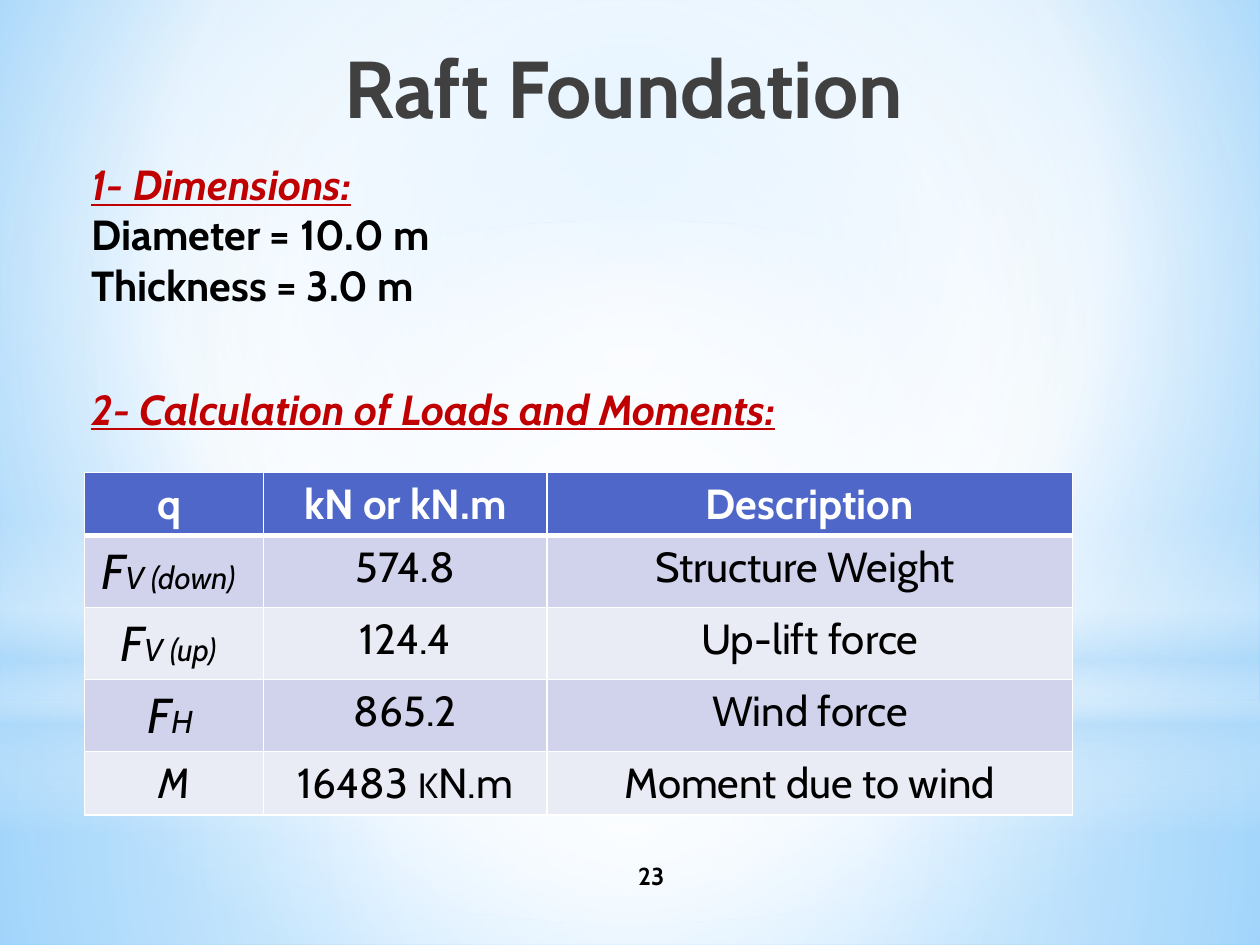
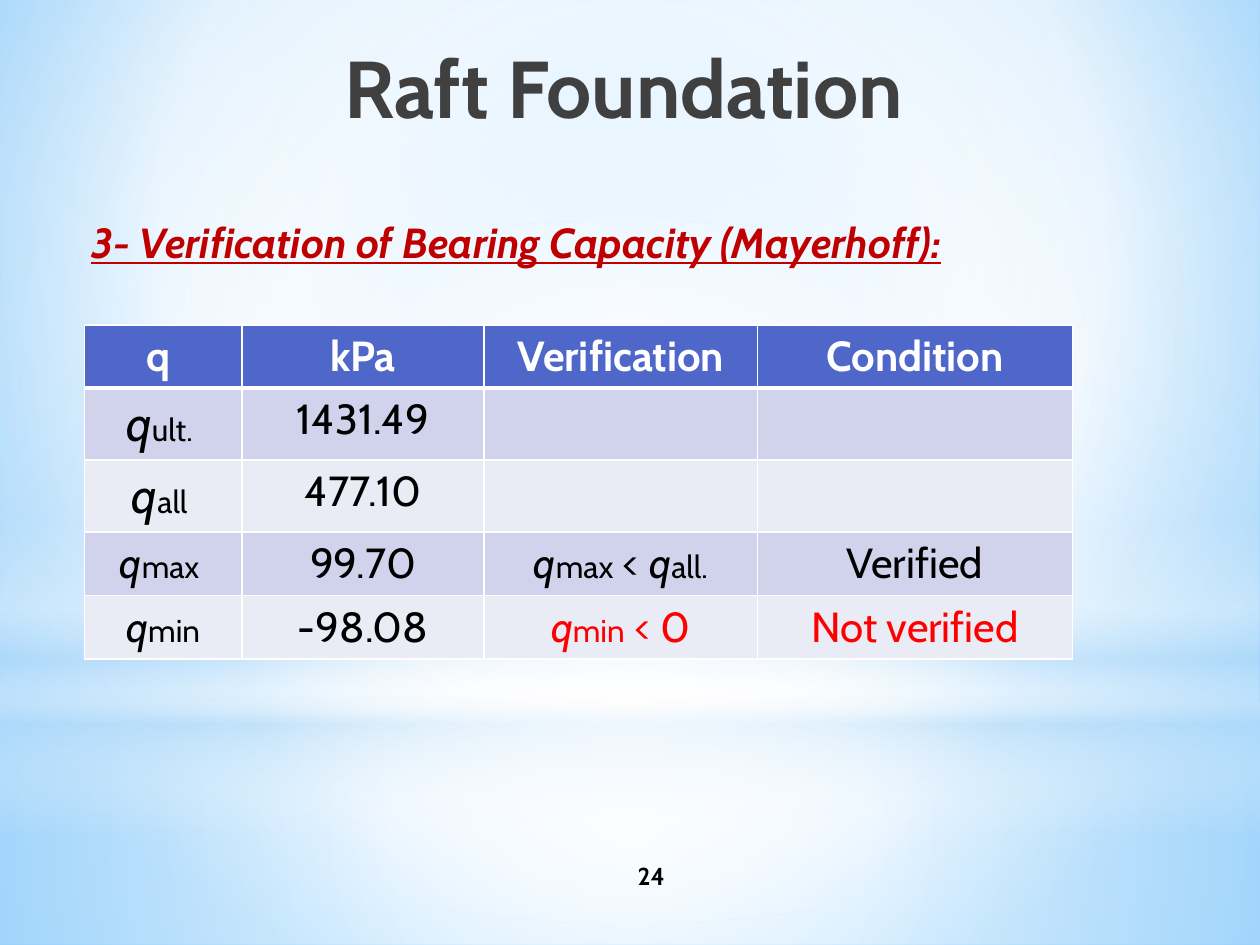
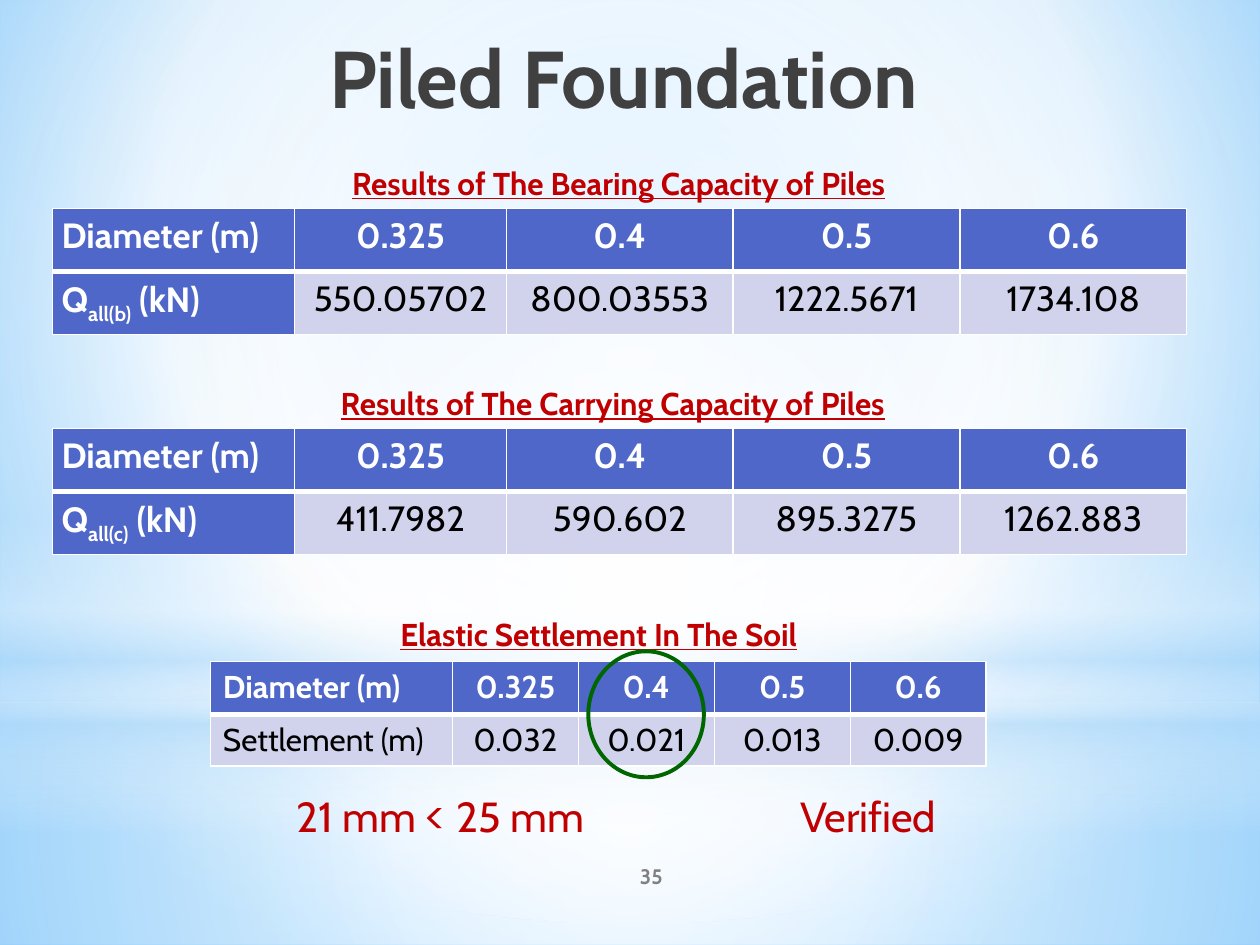
from dataclasses import dataclass
from lxml import etree
from pptx import Presentation
from pptx.dml.color import RGBColor
from pptx.enum.shapes import MSO_SHAPE
from pptx.enum.text import MSO_ANCHOR, MSO_AUTO_SIZE, PP_ALIGN
from pptx.oxml.ns import qn
from pptx.util import Cm, Pt

LEFT, CENTER = PP_ALIGN.LEFT, PP_ALIGN.CENTER
TOP, MIDDLE = MSO_ANCHOR.TOP, MSO_ANCHOR.MIDDLE
RECT, OVAL = MSO_SHAPE.RECTANGLE, MSO_SHAPE.OVAL
TITLE_ONLY = 5


@dataclass(frozen=True)
class Theme:
    font: str = "Cabin"
    white: str = "FFFFFF"
    black: str = "000000"
    title: str = "404040"
    accent: str = "C00000"
    alert: str = "FF0000"
    muted: str = "808080"
    ring: str = "006600"
    header: str = "4E67C8"
    bands: tuple = ("D0D3EB", "E9EBF5")
    sky: str = "B4DCFA"
    edge: str = "9ED5FF"
    deep: str = "5BB9FF"
    title_size: int = 46
    symbol_size: int = 28
    body_size: int = 24
    pile_size: int = 20
    small_size: int = 18
    number_size: int = 14
    grid: int = 1
    header_rule: int = 3


T = Theme()


@dataclass
class Run:
    text: str
    size: int = None
    italic: bool = None
    color: str = None
    baseline: int = None


def rgb(color):
    return RGBColor.from_string(color)


def add(parent, tag, **attrs):
    return etree.SubElement(parent, qn(tag), {k: str(v) for k, v in attrs.items()})


def set_gradient(holder, stops, center=None, angle=90):
    grad = etree.Element(qn("a:gradFill"), {"rotWithShape": "1"})
    gs_list = add(grad, "a:gsLst")
    for pos, color, opacity in stops:
        gs = add(gs_list, "a:gs", pos=pos * 1000)
        clr = add(gs, "a:srgbClr", val=color)
        if opacity < 100:
            add(clr, "a:alpha", val=opacity * 1000)
    if center:
        circle = add(grad, "a:path", **{"path": "circle"})
        add(circle, "a:fillToRect", **{k: v * 1000 for k, v in zip("ltrb", center)})
    else:
        add(grad, "a:lin", ang=angle * 60000, scaled=0)
    holder.replace(holder.find(qn("a:solidFill")), grad)


def write(p, runs, size, color=T.black, bold=False, italic=None, underline=None, align=LEFT):
    p.alignment = align
    f = p.font
    f.name, f.size, f.bold = T.font, Pt(size), bold
    f.italic, f.underline = italic, underline
    f.color.rgb = rgb(color)
    for item in [Run(runs)] if isinstance(runs, str) else runs:
        r = p.add_run()
        r.text = item.text
        if item.size:
            r.font.size = Pt(item.size)
        if item.italic:
            r.font.italic = True
        if item.color:
            r.font.color.rgb = rgb(item.color)
        if item.baseline:
            r.font._element.set("baseline", str(item.baseline * 1000))


def add_text(s, left, top, width, height, runs, size, anchor=TOP, **style):
    tf = s.shapes.add_textbox(Cm(left), Cm(top), Cm(width), Cm(height)).text_frame
    tf.word_wrap = True
    tf.vertical_anchor = anchor
    write(tf.paragraphs[0], runs, size, **style)
    return tf


def add_heading(s, left, top, width, height, text):
    return add_text(s, left, top, width, height, text, T.body_size,
                    color=T.accent, bold=True, italic=True, underline=True)


def set_borders(cell, row):
    tc_pr = cell._tc.get_or_add_tcPr()
    widths = {"a:lnL": T.grid, "a:lnR": T.grid,
              "a:lnT": T.header_rule if row == 1 else T.grid,
              "a:lnB": T.header_rule if row == 0 else T.grid}
    for tag, width in widths.items():
        ln = add(tc_pr, tag, w=Pt(width))
        add(add(ln, "a:solidFill"), "a:srgbClr", val=T.white)


def add_table(s, left, top, cols, heights, rows, size, first_align=CENTER,
              header_col=False, tight=False):
    table = s.shapes.add_table(len(rows), len(cols), Cm(left), Cm(top),
                               Cm(sum(cols)), Cm(sum(heights))).table
    table.horz_banding = False
    for col, width in zip(table.columns, cols):
        col.width = Cm(width)
    for i, (row, height) in enumerate(zip(rows, heights)):
        table.rows[i].height = Cm(height)
        for j, content in enumerate(row):
            cell = table.cell(i, j)
            heading = i == 0 or (header_col and j == 0)
            set_borders(cell, i)
            cell.fill.solid()
            cell.fill.fore_color.rgb = rgb(T.header if heading else T.bands[(i - 1) % 2])
            p = cell.text_frame.paragraphs[0]
            write(p, content, size, color=T.white if heading else T.black, bold=heading,
                  align=CENTER if j else first_align)
            if tight:
                cell.margin_left = cell.margin_right = Cm(0.18)
                cell.margin_top = cell.margin_bottom = 0
                p.line_spacing = 1.15


def symbol(letter, index, upright=True, tail=""):
    runs = [Run(letter, T.symbol_size, True), Run(index, T.small_size, not upright)]
    return runs + [Run(tail, T.symbol_size)] if tail else runs


def add_backdrop(prs, s):
    master = prs.slide_master
    master.background.fill.solid()
    set_gradient(master.element.find(".//" + qn("p:bgPr")),
                 [(0, T.edge, 100), (60, T.white, 100), (100, T.deep, 100)], (20, 10, 20, 60))
    middle = (50, 50, 50, 50)
    layers = [
        (RECT, 14.17, 4.88, middle, [(0, T.white, 91), (37, T.white, 76), (100, T.sky, 79)]),
        (RECT, 0, 14.17, middle, [(0, T.white, 89), (48, T.white, 62), (100, T.sky, 79)]),
        (RECT, 10.46, 6.35, None, [(0, T.white, 0), (29, T.white, 30), (45, T.sky, 40),
                                   (55, T.white, 26), (65, T.sky, 60), (100, T.white, 0)]),
        (OVAL, 4.45, 14.17, middle, [(0, T.white, 100), (56, T.white, 0)]),
    ]
    tree = master.shapes.element
    for i, (kind, top, height, center, stops) in enumerate(layers):
        layer = s.shapes.add_shape(kind, 0, Cm(top), prs.slide_width, Cm(height))
        layer.shadow.inherit = False
        layer.line.fill.background()
        layer.fill.solid()
        set_gradient(layer.element.spPr, stops, center)
        layer.element.nvSpPr.cNvPr.set("id", str(20 + i))
        tree.insert(2 + i, layer.element)


def new_slide(prs, title, number, title_top=0.64, number_size=T.number_size,
              number_color=T.black):
    s = prs.slides.add_slide(prs.slide_layouts[TITLE_ONLY])
    ph = s.shapes.title
    ph.left, ph.top, ph.width, ph.height = Cm(3.71), Cm(title_top), Cm(18.08), Cm(3.18)
    tf = ph.text_frame
    tf.auto_size = MSO_AUTO_SIZE.NONE
    tf.vertical_anchor = TOP
    write(tf.paragraphs[0], title, T.title_size, color=T.title, bold=True, align=CENTER)
    add_text(s, 10.59, 17.15, 5.08, 1.02, number, number_size, anchor=MIDDLE,
             color=number_color, bold=True, align=CENTER)
    return s


def add_dimensions(s, left, top, width, height):
    tf = add_heading(s, left, top, width, height, "1- Dimensions:")
    for line in ("Diameter = 10.0 m", "Thickness = 3.0 m"):
        write(tf.add_paragraph(), line, T.body_size, bold=True)


def add_loads(s, left, top):
    add_heading(s, left, top, 21.29, 1.27, "2- Calculation of Loads and Moments:")
    rows = [
        ["q ", "kN or kN.m", "Description"],
        [symbol("F", "V (down)", False, " "), "574.8", "Structure Weight "],
        [symbol("F", "V (up)", False, " "), "124.4", "Up-lift force"],
        [symbol("F", "H ", False), "865.2", "Wind force"],
        [[Run("M", italic=True)], [Run("16483 "), Run("K", T.pile_size), Run("N.m")],
         "Moment due to wind"],
    ]
    add_table(s, left + 0.11, top + 1.93, [3.61, 5.72, 10.59],
              [1.27, 1.45, 1.45, 1.45, 1.28], rows, T.body_size)


def add_bearing_check(s, left, top):
    add_heading(s, left, top, 21.29, 1.27, "3- Verification of Bearing Capacity (Mayerhoff):")
    q = Run("q", italic=True)
    red_q = Run("q", italic=True, color=T.alert)
    limit = [q, Run("max", T.small_size), Run(" < "), q, Run("all.", T.small_size)]
    tension = [red_q, Run("min", T.small_size, color=T.alert), Run(" < 0", color=T.alert)]
    rows = [
        ["q ", "kPa", "Verification", "Condition"],
        [symbol("q", "ult. "), "1431.49", "", ""],
        [symbol("q", "all "), "477.10", "", ""],
        [[q, Run("max ", T.small_size)], "99.70", limit, "Verified"],
        [[q, Run("min", T.small_size)], "-98.08", tension,
         [Run("Not verified", color=T.alert)]],
    ]
    add_table(s, left + 0.11, top + 2.31, [3.18, 4.88, 5.51, 6.35],
              [1.27, 1.45, 1.45, 1.28, 1.28], rows, T.body_size)


DIAMETERS = ["Diameter (m)", "0.325", "0.4", "0.5", "0.6"]


def add_caption(s, left, top, width, text):
    add_text(s, left, top, width, 1.02, text, T.small_size,
             color=T.accent, bold=True, underline=True)


def add_capacity(s, left, top, kind, index, values, indent, width):
    add_caption(s, left + indent, top, width, f"Results of The {kind} Capacity of Piles")
    label = [Run("Q"), Run(f"all({index})", baseline=-25), Run(" (kN)")]
    add_table(s, left, top + 1.02, [4.88, 4.27] + [4.57] * 3, [1.27, 1.27],
              [DIAMETERS, [label] + values], T.pile_size, LEFT, header_col=True, tight=True)


def add_settlement(s, left, top):
    add_caption(s, left + 3.58, top, 9.25, "Elastic Settlement In The Soil")
    add_table(s, left, top + 1.07, [4.88, 2.54] + [2.74] * 3, [1.06, 1.04],
              [DIAMETERS, ["Settlement (m)", "0.032", "0.021", "0.013", "0.009"]],
              T.small_size, LEFT)
    ring = s.shapes.add_shape(OVAL, Cm(left + 7.62), Cm(top + 0.86), Cm(2.33), Cm(2.54))
    ring.shadow.inherit = False
    ring.fill.background()
    ring.line.color.rgb = rgb(T.ring)
    ring.line.width = Pt(2.25)
    runs = [Run("21 mm "), Run("< ", T.symbol_size), Run("25 mm \tVerified")]
    tf = add_text(s, left + 1.48, top + 3.4, 18.85, 1.45, runs, T.body_size, color=T.accent)
    tabs = etree.Element(qn("a:tabLst"))
    add(tabs, "a:tab", pos=Cm(10.16), algn="l")
    tf.paragraphs[0]._p.get_or_add_pPr().insert(0, tabs)


def main():
    prs = Presentation()
    prs.slide_width, prs.slide_height = Cm(25.4), Cm(19.05)

    s = new_slide(prs, "Raft Foundation ", "23")
    add_backdrop(prs, s)
    add_dimensions(s, 1.59, 3.07, 11.43, 3.33)
    add_loads(s, 1.59, 7.6)

    s = new_slide(prs, "Raft Foundation ", "24")
    add_bearing_check(s, 1.59, 4.24)

    s = new_slide(prs, "Piled Foundation ", "35", 0.43, 12, T.muted)
    add_capacity(s, 1.06, 3.18, "Bearing", "b",
                 ["550.05702", "800.03553", "1222.5671", "1734.108"], 5.79, 12.27)
    add_capacity(s, 1.06, 7.62, "Carrying", "c",
                 ["411.7982", "590.602", "895.3275", "1262.883"], 5.56, 12.6)
    add_settlement(s, 4.24, 12.27)

    prs.save("out.pptx")


if __name__ == "__main__":
    main()
